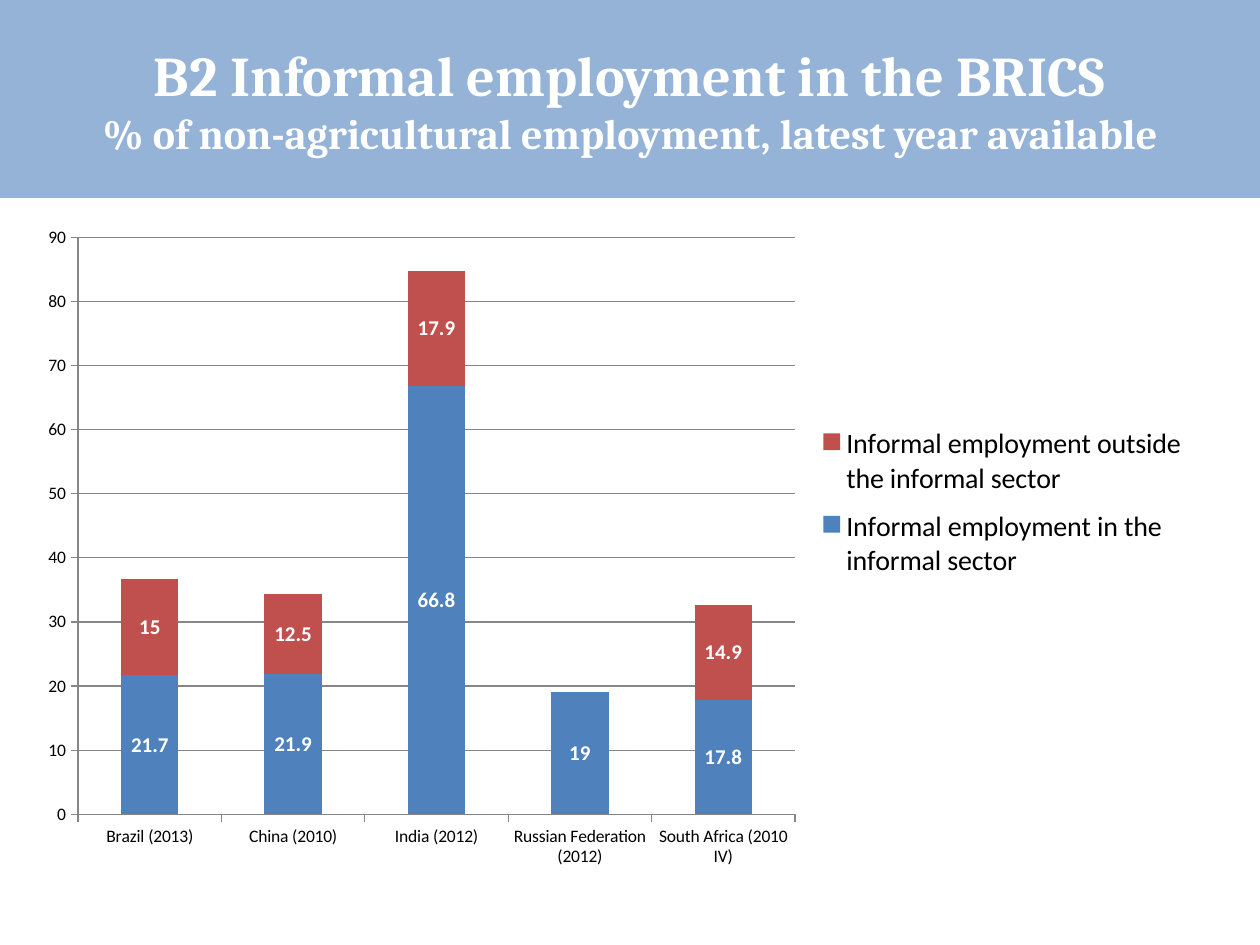
"""Build the slide on informal employment in the BRICS."""
from lxml.etree import SubElement
from pptx import Presentation
from pptx.chart.data import CategoryChartData
from pptx.dml.color import RGBColor
from pptx.enum.chart import XL_CHART_TYPE, XL_LEGEND_POSITION, XL_TICK_MARK
from pptx.enum.shapes import MSO_SHAPE
from pptx.enum.text import MSO_ANCHOR, PP_ALIGN
from pptx.oxml.ns import qn
from pptx.util import Pt

EMU_PER_PX = 914400 / 126
COLORS = {
    "band": "95B3D7",
    "white": "FFFFFF",
    "black": "000000",
    "axis": "868686",
    "inside": "4F81BD",
    "outside": "C0504D",
}


def px(*lengths):
    return [round(length * EMU_PER_PX) for length in lengths]


def style_font(font, color, **values):
    for name, value in values.items():
        setattr(font, name, value)
    font.color.rgb = RGBColor.from_string(COLORS[color])


presentation = Presentation()
presentation.slide_width, presentation.slide_height = px(1260, 945)
slide = presentation.slides.add_slide(presentation.slide_layouts[6])

band = slide.shapes.add_shape(MSO_SHAPE.RECTANGLE, *px(0, 0, 1260, 198))
band.shadow.inherit = False
band.fill.solid()
band.fill.fore_color.rgb = RGBColor.from_string(COLORS["band"])
band.line.fill.background()

title = slide.shapes.add_textbox(*px(0, 34, 1260, 131))
title_frame = title.text_frame
title_frame.word_wrap = True
title_frame.vertical_anchor = MSO_ANCHOR.MIDDLE
title_frame.text = (
    "B2 Informal employment in the BRICS\n"
    "% of non-agricultural employment, latest year available"
)
for paragraph, size in zip(title_frame.paragraphs, (32, 24)):
    paragraph.alignment = PP_ALIGN.CENTER
    style_font(paragraph.runs[0].font, "white", name="Cambria", size=Pt(size), bold=True)

chart_data = CategoryChartData()
chart_data.categories = [
    "Brazil (2013)",
    "China (2010)",
    "India (2012)",
    "Russian Federation (2012)",
    "South Africa (2010 IV)",
]
chart_data.add_series("Informal employment in the informal sector", (21.7, 21.9, 66.8, 19, 17.8))
chart_data.add_series("Informal employment outside the informal sector", (15, 12.5, 17.9, None, 14.9))

chart = slide.shapes.add_chart(
    XL_CHART_TYPE.COLUMN_STACKED, *px(25, 214, 1181, 665), chart_data
).chart
chart.has_title = False
style_font(chart.font, "black", name="Calibri", size=Pt(10))

plot = chart.plots[0]
for name, value in {"gap_width": 150, "overlap": 100, "vary_by_categories": False}.items():
    setattr(plot, name, value)
for series, color in zip(plot.series, ("inside", "outside")):
    series.format.fill.solid()
    series.format.fill.fore_color.rgb = RGBColor.from_string(COLORS[color])
    labels = series.data_labels
    labels.show_value = True
    style_font(labels.font, "white", name="Calibri", size=Pt(12), bold=True)

value_axis = chart.value_axis
for name, value in {"minimum_scale": 0, "maximum_scale": 90, "major_unit": 10}.items():
    setattr(value_axis, name, value)
value_axis.has_major_gridlines = True
for axis in (chart.category_axis, value_axis):
    axis.major_tick_mark = XL_TICK_MARK.OUTSIDE
    axis.minor_tick_mark = XL_TICK_MARK.NONE
for item in (chart.category_axis, value_axis, value_axis.major_gridlines):
    item.format.line.width = Pt(0.75)
    item.format.line.color.rgb = RGBColor.from_string(COLORS["axis"])

chart.has_legend = True
legend = chart.legend
legend.position = XL_LEGEND_POSITION.RIGHT
legend.include_in_layout = False
style_font(legend.font, "black", name="Calibri", size=Pt(16))

plot_area = plot._element.getparent()
layouts = (
    (plot_area, 0, True, (0.045, 0.035, 0.607, 0.868)),
    (legend._element, 1, False, (0.665, 0.3, 0.325, 0.27)),
)
for parent, index, inner, bounds in layouts:
    for old_layout in parent.findall(qn("c:layout")):
        parent.remove(old_layout)
    layout = SubElement(parent, qn("c:layout"))
    parent.insert(index, layout)
    manual = SubElement(layout, qn("c:manualLayout"))
    settings = [("layoutTarget", "inner")] if inner else []
    settings += [("xMode", "edge"), ("yMode", "edge"), *zip("xywh", bounds)]
    for tag, value in settings:
        SubElement(manual, qn(f"c:{tag}")).set("val", str(value))

presentation.save("out.pptx")
